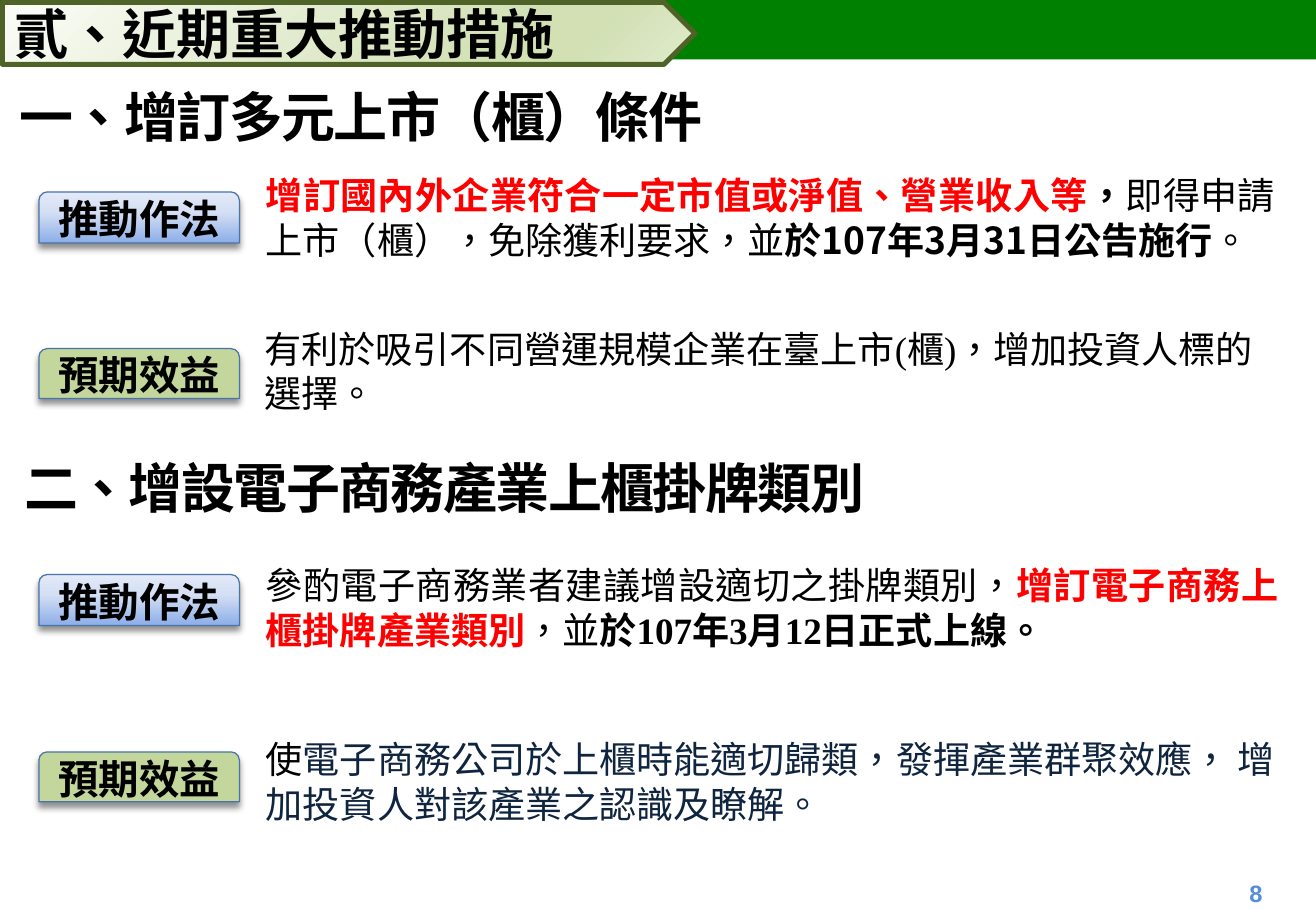
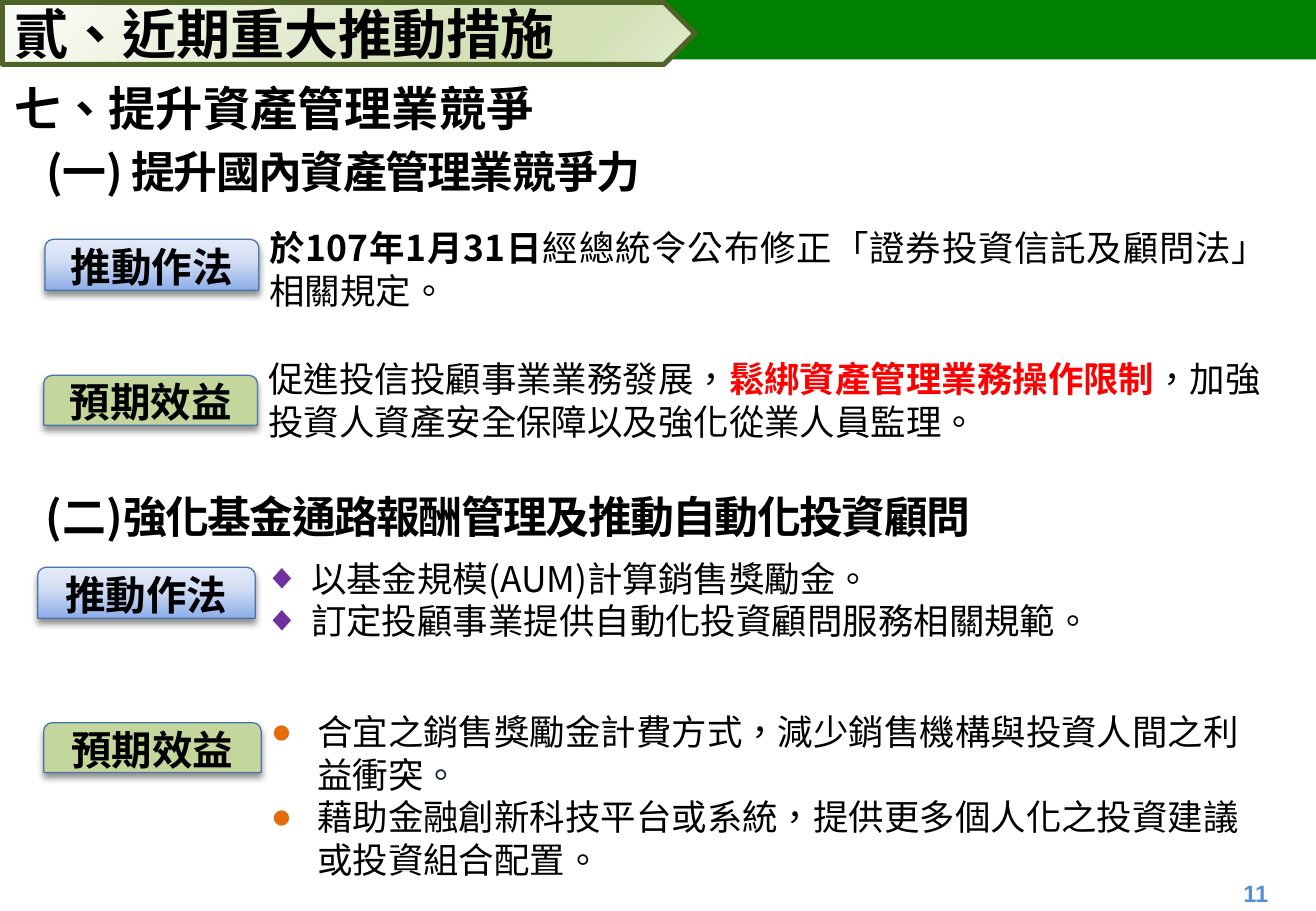
from dataclasses import dataclass
from typing import NamedTuple

from pptx import Presentation
from pptx.dml.color import RGBColor
from pptx.enum.lang import MSO_LANGUAGE_ID
from pptx.enum.shapes import MSO_SHAPE
from pptx.enum.text import MSO_ANCHOR, MSO_AUTO_SIZE, PP_ALIGN
from pptx.oxml import parse_xml
from pptx.oxml.ns import nsdecls, qn
from pptx.oxml.xmlchemy import OxmlElement
from pptx.util import Inches, Pt


@dataclass(frozen=True)
class Theme:
    sans: str = "Noto Sans CJK SC"
    serif: str = "Times New Roman"
    rounded: str = "Comic Neue"
    number_font: str = "Arial"
    black: str = "000000"
    red: str = "FF0000"
    navy: str = "0F243E"
    band: str = "008000"
    number: str = "558ED5"
    banner_line: str = "4F6228"
    label_line: str = "4875AC"
    benefit_fill: str = "C3D69B"
    diamond: str = "7030A0"
    dot: str = "E46C0A"
    banner_stops: tuple = ((0, "FAFCF7"), (74, "D2E0B4"), (83, "D2E0B4"), (100, "E1EBCD"))
    action_stops: tuple = ((0, "8DAEE8"), (62, "D6E0F4"), (100, "E2E9F7"))
    banner_size: int = 32
    label_size: int = 24
    number_size: int = 14
    line_factor: float = 1.21


THEME = Theme()


class Box(NamedTuple):
    left: float
    top: float
    width: float
    height: float

    def lengths(self):
        return [Inches(value) for value in self]


class Span(NamedTuple):
    text: str
    color: str = THEME.black
    bold: bool = False
    font: str = THEME.sans


class Bullet(NamedTuple):
    sign: str
    color: str


def style_font(font, name, color, bold, size=None):
    """Use the named font for Latin text and the sans font for Chinese."""
    font.name = name
    font.color.rgb = RGBColor.from_string(color)
    font.bold = bold
    font.language_id = MSO_LANGUAGE_ID.TRADITIONAL_CHINESE
    if size:
        font.size = Pt(size)
    east_asian = OxmlElement("a:ea")
    east_asian.set("typeface", THEME.sans)
    font._rPr.append(east_asian)


def place(shape, box):
    shape.left, shape.top, shape.width, shape.height = box.lengths()


def write_line(shape, text, size, font=THEME.sans, color=THEME.black,
               align=PP_ALIGN.LEFT, tracking=None):
    """Fill a shape with one bold line, centred vertically."""
    frame = shape.text_frame
    frame.auto_size = MSO_AUTO_SIZE.NONE
    frame.word_wrap = True
    frame.vertical_anchor = MSO_ANCHOR.MIDDLE
    frame.margin_top = frame.margin_bottom = 0
    para = frame.paragraphs[0]
    para.text = text
    para.alignment = align
    style_font(para.font, font, color, True, size)
    if tracking:
        para.runs[0].font._rPr.set("spc", str(tracking * 100))


def add_line(page, box, text, size, **style):
    write_line(page.shapes.add_textbox(*box.lengths()), text, size, **style)


def set_title(page, box, text, size):
    place(page.shapes.title, box)
    write_line(page.shapes.title, text, size, tracking=-1)


def fill_gradient(shape, stops, angle):
    shape.fill.gradient()
    properties = shape.element.spPr
    marks = "".join(
        f'<a:gs pos="{at * 1000}"><a:srgbClr val="{color}"/></a:gs>' for at, color in stops)
    properties.replace(properties.find(qn("a:gradFill")), parse_xml(
        f'<a:gradFill {nsdecls("a")} rotWithShape="1"><a:gsLst>{marks}</a:gsLst>'
        f'<a:lin ang="{angle * 60000}" scaled="0"/></a:gradFill>'))


def add_outlined(page, kind, box, line, weight):
    shape = page.shapes.add_shape(kind, *box.lengths())
    shape.shadow.inherit = False
    shape.line.color.rgb = RGBColor.from_string(line)
    shape.line.width = Pt(weight)
    return shape


def add_label(page, box, text):
    shape = add_outlined(page, MSO_SHAPE.ROUND_2_SAME_RECTANGLE, box, THEME.label_line, 0.75)
    shape.element.spPr.find(qn("a:effectLst")).append(parse_xml(
        f'<a:outerShdw {nsdecls("a")} blurRad="{Pt(4)}" dist="{Pt(3)}" dir="5400000" '
        'rotWithShape="0"><a:srgbClr val="000000"><a:alpha val="43000"/></a:srgbClr>'
        '</a:outerShdw>'))
    write_line(shape, text, THEME.label_size, align=PP_ALIGN.CENTER)
    return shape


def add_action_label(page, box):
    fill_gradient(add_label(page, box, "推動作法"), THEME.action_stops, 270)


def add_benefit_label(page, box):
    shape = add_label(page, box, "預期效益")
    shape.fill.solid()
    shape.fill.fore_color.rgb = RGBColor.from_string(THEME.benefit_fill)


def set_indent(para, left, first=0.0, bullet=None):
    """Indent a paragraph and keep its punctuation inside the box."""
    properties = para._p.get_or_add_pPr()
    properties.set("marL", str(Inches(left)))
    properties.set("indent", str(Inches(first)))
    properties.set("hangingPunct", "0")
    if bullet:
        color = OxmlElement("a:buClr")
        value = OxmlElement("a:srgbClr")
        value.set("val", bullet.color)
        color.append(value)
        sign = OxmlElement("a:buChar")
        sign.set("char", bullet.sign)
        properties.extend([color, sign])


def write_body(shape, paragraphs, size, align=PP_ALIGN.LEFT, indent=0.0, bullet=None):
    frame = shape.text_frame
    frame.auto_size = MSO_AUTO_SIZE.NONE
    frame.word_wrap = True
    frame.margin_top = Inches(0.04)
    for index, spans in enumerate(paragraphs):
        para = frame.add_paragraph() if index else frame.paragraphs[0]
        para.alignment = align
        para.line_spacing = Pt(size * THEME.line_factor)
        para.space_before = Pt(0)
        if bullet:
            set_indent(para, 0.38, -0.38, bullet)
        else:
            set_indent(para, indent)
        para.font.size = Pt(size)
        for span in spans:
            run = para.add_run()
            run.text = span.text
            style_font(run.font, span.font, span.color, span.bold)


def add_body(page, box, spans, size, **style):
    write_body(page.shapes.add_textbox(*box.lengths()), [spans], size, **style)


def fill_list(placeholder, box, paragraphs, size, **style):
    place(placeholder, box)
    write_body(placeholder, paragraphs, size, **style)


def add_master_band(deck, page):
    """Draw the green band once and hand it to the master, behind all else."""
    band = page.shapes.add_shape(MSO_SHAPE.RECTANGLE, *Box(0, 0, 10.83, 0.49).lengths())
    band.shadow.inherit = False
    band.fill.solid()
    band.fill.fore_color.rgb = RGBColor.from_string(THEME.band)
    band.line.fill.background()
    band.element.nvSpPr.cNvPr.set("id", "20")
    deck.slide_master.shapes.element.insert(2, band.element)


def add_frame(page, number):
    """Add the section banner and the page number."""
    banner = add_outlined(page, MSO_SHAPE.PENTAGON, Box(0.02, 0.02, 5.7, 0.51),
                          THEME.banner_line, 3)
    fill_gradient(banner, THEME.banner_stops, 45)
    write_line(banner, "貳、近期重大推動措施", THEME.banner_size)
    add_line(page, Box(9.82, 7.17, 1.03, 0.36), str(number), THEME.number_size,
             font=THEME.number_font, color=THEME.number, align=PP_ALIGN.CENTER)


def build_listing_page(page):
    heading_size, body_size = 32, 22
    set_title(page, Box(0.06, 0.66, 10.83, 0.59), "一、增訂多元上市（櫃）條件", heading_size)
    add_line(page, Box(0.1, 3.71, 10.83, 0.59), "二、增設電子商務產業上櫃掛牌類別",
             heading_size, tracking=-1)
    for top in (1.58, 4.73):
        add_action_label(page, Box(0.32, top, 1.65, 0.42))
    for top in (2.87, 6.19):
        add_benefit_label(page, Box(0.32, top, 1.65, 0.41))

    add_body(page, Box(2.09, 1.38, 8.5, 1.21), [
        Span("增訂國內外企業符合一定市值或淨值、營業收入等", THEME.red, True),
        Span("，", bold=True),
        Span("即得申請上市（櫃），免除獲利要求，並"),
        Span("於107年3月31日公告施行", bold=True),
        Span("。"),
    ], body_size, align=PP_ALIGN.JUSTIFY)
    add_body(page, Box(1.88, 2.64, 8.81, 0.84), [
        Span("有利於吸引不同營運規模企業在臺上市(櫃)，增加投資人標的選擇。", font=THEME.serif),
    ], body_size, indent=0.2)
    add_body(page, Box(2.09, 4.59, 8.53, 0.84), [
        Span("參酌電子商務業者建議增設適切之掛牌類別，", font=THEME.serif),
        Span("增訂電子商務上櫃掛牌產業類別", THEME.red, True, THEME.serif),
        Span("，並", font=THEME.serif),
        Span("於107年3月12日正式上線。", bold=True, font=THEME.serif),
    ], body_size, align=PP_ALIGN.JUSTIFY)
    add_body(page, Box(2.09, 6.02, 8.53, 0.84), [
        Span("使"),
        Span("電子商務公司於上櫃時能適切歸類，發揮產業群聚效應， 增加投資人對該產業之認識及瞭解。",
             THEME.navy, font=THEME.serif),
    ], body_size)


def build_asset_page(page):
    topic_size, heading_size, body_size = 28, 26, 21
    add_line(page, Box(0.02, 0.6, 5.16, 0.57), "七、提升資產管理業競爭", topic_size,
             font=THEME.rounded)
    set_title(page, Box(0.28, 1.11, 10.83, 0.59), "(一) 提升國內資產管理業競爭力", heading_size)
    add_line(page, Box(0.28, 3.95, 10.83, 0.59),
             "(二)強化基金通路報酬管理及推動自動化投資顧問", heading_size, tracking=-1)
    add_action_label(page, Box(0.37, 1.97, 1.76, 0.42))
    add_benefit_label(page, Box(0.36, 3.09, 1.76, 0.41))
    add_action_label(page, Box(0.31, 4.67, 1.79, 0.42))
    add_benefit_label(page, Box(0.36, 5.95, 1.79, 0.41))

    add_body(page, Box(2.12, 1.82, 8.41, 0.81), [
        Span("於107年1月31日", bold=True),
        Span("經總統令公布修正「證券投資信託及顧問法」相關規定。"),
    ], body_size, align=PP_ALIGN.JUSTIFY)
    add_body(page, Box(1.91, 2.9, 8.79, 0.81), [
        Span("促進投信投顧事業業務發展", font=THEME.serif),
        Span("，"),
        Span("鬆綁資產管理業務操作限制", THEME.red, True),
        Span("，"),
        Span("加強投資人資產安全保障以及強化從業人員監理。", font=THEME.serif),
    ], body_size, indent=0.2)

    actions, benefits = list(page.placeholders)[1:]
    fill_list(actions, Box(2.08, 4.54, 8.61, 0.81), [
        [Span("以基金規模(AUM)計算銷售獎勵金。")],
        [Span("訂定投顧事業提供自動化投資顧問服務相關規範。")],
    ], body_size, align=PP_ALIGN.JUSTIFY, bullet=Bullet("◆", THEME.diamond))
    fill_list(benefits, Box(2.13, 5.8, 8.42, 1.51), [
        [Span("合宜之銷售獎勵金計費方式，減少銷售機構與投資人間之利益衝突"),
         Span("。", THEME.navy, font=THEME.serif)],
        [Span("藉助金融創新科技平台或系統，提供更多個人化之投資建議或投資組合配置。")],
    ], body_size, bullet=Bullet("●", THEME.dot))


def main():
    deck = Presentation()
    deck.slide_width, deck.slide_height = Inches(10.83), Inches(7.5)
    title_only, two_content = deck.slide_layouts[5], deck.slide_layouts[3]
    listing_page = deck.slides.add_slide(title_only)
    asset_page = deck.slides.add_slide(two_content)
    add_master_band(deck, listing_page)
    build_listing_page(listing_page)
    build_asset_page(asset_page)
    add_frame(listing_page, 8)
    add_frame(asset_page, 11)
    deck.save("out.pptx")


if __name__ == "__main__":
    main()
